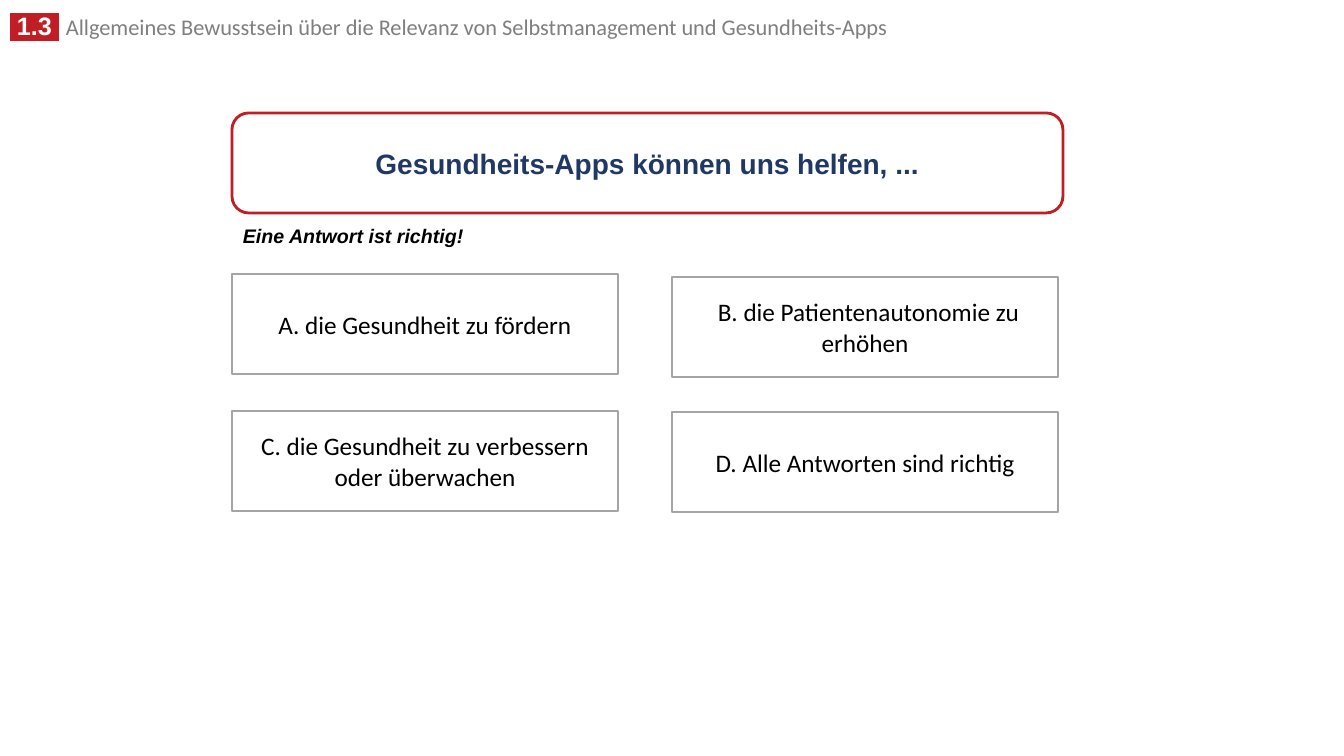
from lxml import etree
from pptx import Presentation
from pptx import util as u
from pptx.dml.color import RGBColor
from pptx.enum import shapes, text
from pptx.oxml import ns

PX_PER_INCH = 100.8
RED = RGBColor(0xC0, 0x1E, 0x24)
NAVY = RGBColor(0x20, 0x38, 0x64)
GREY = RGBColor(0x7F, 0x7F, 0x7F)
BORDER = RGBColor(0xA5, 0xA5, 0xA5)
BLACK = RGBColor(0, 0, 0)
WHITE = RGBColor(255, 255, 255)

BADGE = {"name": "Arial", "size": u.Pt(18), "bold": True}
HEADING = {"name": "Calibri", "size": u.Pt(16), "bold": False}
QUESTION = {"name": "Arial", "size": u.Pt(20), "bold": True}
HINT = {"name": "Arial", "size": u.Pt(14), "bold": True, "italic": True}
ANSWER = {"name": "Calibri", "size": u.Pt(18)}
SPACER = {"name": "Arial", "size": u.Pt(18)}

ANSWER_WIDTH, ANSWER_HEIGHT = 386, 100
ANSWERS = [
    (232, 274, "A. die Gesundheit zu fördern"),
    (672, 277, "B. die Patientenautonomie zu erhöhen"),
    (232, 411, "C. die Gesundheit zu verbessern oder überwachen"),
    (672, 412, "D. Alle Antworten sind richtig"),
]


def px(*lengths):
    return [u.Inches(length / PX_PER_INCH) for length in lengths]


def add_run(paragraph, wording, style, color):
    run = paragraph.add_run()
    run.text = wording
    for attribute, value in style.items():
        setattr(run.font, attribute, value)
    run.font.color.rgb = color
    return run


def highlight(run, color):
    fill = run.font.fill
    properties = run._r.get_or_add_rPr()
    mark = etree.Element(ns.qn("a:highlight"))
    etree.SubElement(mark, ns.qn("a:srgbClr"), val=str(color))
    properties.find(ns.qn("a:solidFill")).addnext(mark)


def add_label(slide, box, wrap):
    frame = slide.shapes.add_textbox(*px(*box)).text_frame
    frame.word_wrap = wrap
    frame.auto_size = text.MSO_AUTO_SIZE.SHAPE_TO_FIT_TEXT
    return frame.paragraphs[0]


def add_box(slide, kind, box, border):
    card = slide.shapes.add_shape(kind, *px(*box))
    card.shadow.inherit = False
    card.fill.solid()
    card.fill.fore_color.rgb = WHITE
    card.line.color.rgb = border
    card.line.width = u.Pt(2)
    card.text_frame.word_wrap = True
    card.text_frame.vertical_anchor = text.MSO_ANCHOR.MIDDLE
    paragraph = card.text_frame.paragraphs[0]
    paragraph.alignment = text.PP_ALIGN.CENTER
    return paragraph


def main():
    deck = Presentation()
    deck.slide_width, deck.slide_height = px(1344, 756)
    slide = deck.slides.add_slide(deck.slide_layouts[6])

    heading = add_label(slide, (0, 11, 960, 34), True)
    heading.line_spacing = 0.8
    highlight(add_run(heading, " 1.3 ", BADGE, WHITE), RED)
    add_run(heading, " ", SPACER, GREY)
    add_run(heading, "Allgemeines Bewusstsein über die Relevanz von "
            "Selbstmanagement und Gesundheits-Apps", HEADING, GREY)

    question = add_box(slide, shapes.MSO_SHAPE.ROUNDED_RECTANGLE,
                       (232, 113, 831, 100), RED)
    add_run(question, "Gesundheits-Apps können uns helfen, ...", QUESTION, NAVY)

    hint = add_label(slide, (233, 219, 242, 34), False)
    add_run(hint, "Eine Antwort ist richtig!", HINT, BLACK)

    for left, top, wording in ANSWERS:
        answer = add_box(slide, shapes.MSO_SHAPE.RECTANGLE,
                         (left, top, ANSWER_WIDTH, ANSWER_HEIGHT), BORDER)
        if wording.startswith("B."):
            add_run(answer, " ", SPACER, BLACK)
        add_run(answer, wording, ANSWER, BLACK)

    deck.save("out.pptx")


if __name__ == "__main__":
    main()
